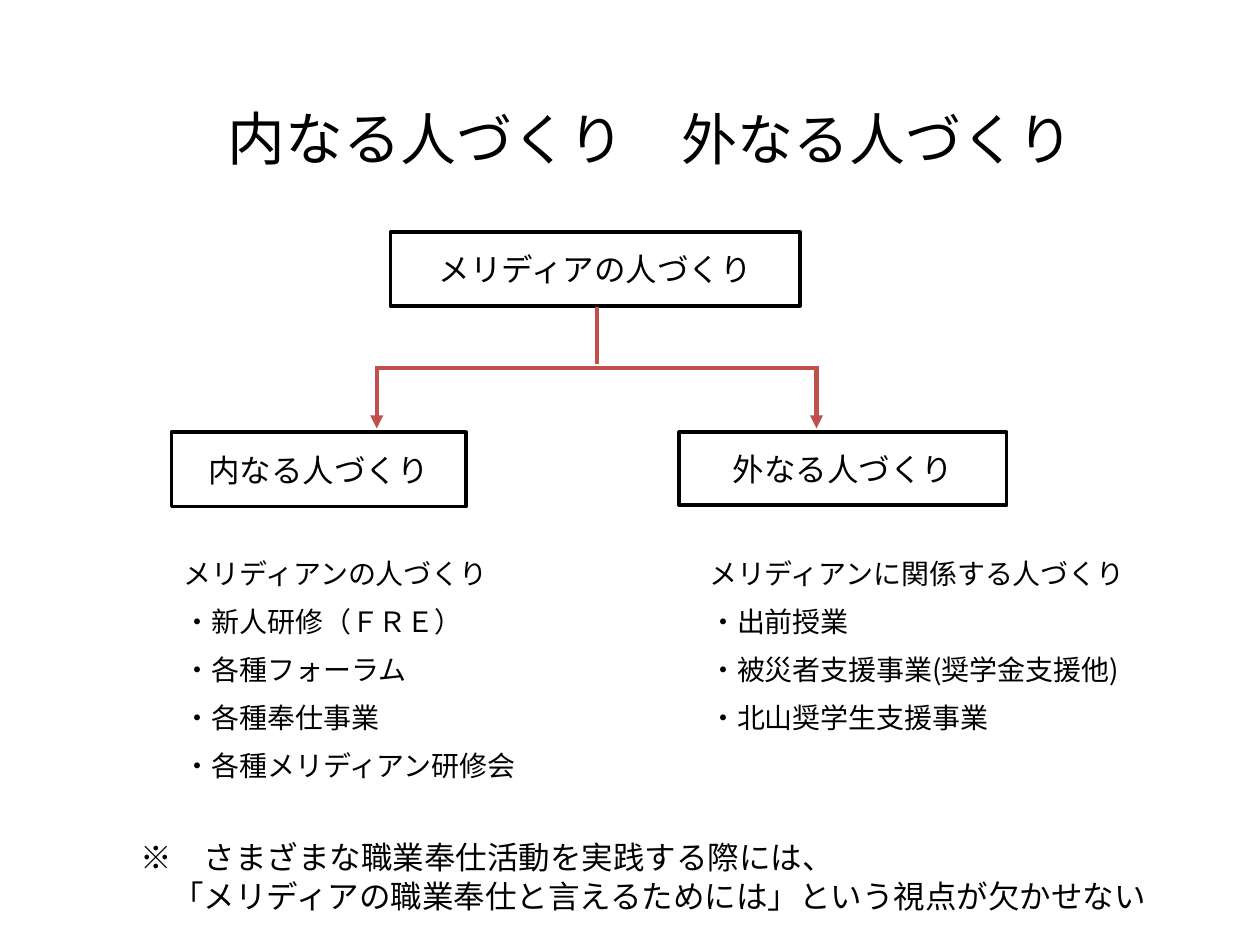
"""Build a one-slide chart of inner and outer people development."""
from dataclasses import dataclass

from lxml import etree
from pptx import Presentation
from pptx import util as u
from pptx.dml.color import RGBColor
from pptx.enum import shapes, text
from pptx.oxml.ns import qn

COLORS = {"ink": "000000", "arrow": "C0504D"}
FONT = "Noto Sans CJK JP"
COLS, ROWS = 100, 75
LINE_RATIO = 1.22
ARROW_WIDTH = 2.5


@dataclass(frozen=True)
class Area:
    """Place and size in grid columns and rows."""
    col: float
    row: float
    cols: float
    rows: float


@dataclass(frozen=True)
class Run:
    """A piece of text with its size in points."""
    words: str
    size: float


@dataclass(frozen=True)
class Block:
    """Paragraphs of runs in one area of the slide."""
    area: Area
    paragraphs: list[list[Run]]
    gap: float = 0
    align: text.PP_ALIGN = text.PP_ALIGN.LEFT


def lines(size: float, *words: str) -> list[list[Run]]:
    """Make one single-run paragraph of each string."""
    return [[Run(w, size)] for w in words]


BOXES = [
    Area(31, 18.4, 32.5, 5.9),
    Area(13.6, 34.3, 23.4, 5.9),
    Area(53.9, 34.3, 26, 5.8),
]
BOX_LABELS = lines(18, "メリディアの人づくり", "内なる人づくり", "外なる人づくり")
TITLE = Block(
    Area(8.5, 7.6, 86.3, 9),
    [[Run("内なる", 33), Run("人づくり　外なる人づくり", 32)]],
    align=text.PP_ALIGN.CENTER,
)
INNER = Block(
    Area(13.6, 43.6, 32.6, 19.9),
    lines(16, "メリディアンの人づくり", "・新人研修（ＦＲＥ）", "・各種フォーラム",
          "・各種奉仕事業", "・各種メリディアン研修会"),
    gap=8,
)
OUTER = Block(
    Area(55.3, 43.6, 38.6, 19.9),
    lines(16, "メリディアンに関係する人づくり", "・出前授業",
          "・被災者支援事業(奨学金支援他)", "・北山奨学生支援事業"),
    gap=8,
)
NOTE = Block(
    Area(10.2, 66, 82.8, 7.1),
    lines(18, "※　さまざまな職業奉仕活動を実践する際には、",
          "　「メリディアの職業奉仕と言えるためには」という視点が欠かせない"),
)
STEM = ((47.4, 24.4), (47.4, 28.9))
BRANCH = [(29.9, 34), (29.9, 29.2), (64.8, 29.2), (64.8, 34)]


def rgb(name: str) -> RGBColor:
    """Look up a colour of the slide."""
    return RGBColor.from_string(COLORS[name])


def place(prs, col: float, row: float) -> tuple[int, int]:
    """Turn grid columns and rows into slide lengths."""
    return round(prs.slide_width * col / COLS), round(prs.slide_height * row / ROWS)


def bounds(prs, area: Area) -> tuple[int, ...]:
    """Give left, top, width and height of an area."""
    return place(prs, area.col, area.row) + place(prs, area.cols, area.rows)


def write(tf, block: Block) -> None:
    """Fill a text frame run by run."""
    tf.word_wrap = True
    for i, runs in enumerate(block.paragraphs):
        p = tf.add_paragraph() if i else tf.paragraphs[0]
        p.alignment = block.align
        p.line_spacing = u.Pt(max(r.size for r in runs) * LINE_RATIO)
        p.space_before = u.Pt(block.gap if i else 0)
        for part in runs:
            r = p.add_run()
            r.text = part.words
            r.font.size = u.Pt(part.size)
            r.font.name = FONT
            r.font.color.rgb = rgb("ink")
            ea = etree.SubElement(r.font._element, qn("a:ea"))
            ea.set("typeface", FONT)


def add_text(prs, s, block: Block) -> None:
    """Add a plain text block."""
    write(s.shapes.add_textbox(*bounds(prs, block.area)).text_frame, block)


def add_box(prs, s, block: Block) -> None:
    """Add an outlined box with a centred label."""
    sp = s.shapes.add_shape(shapes.MSO_SHAPE.RECTANGLE, *bounds(prs, block.area))
    sp.shadow.inherit = False
    sp.fill.background()
    sp.line.color.rgb = rgb("ink")
    sp.line.width = u.Pt(2)
    sp.text_frame.vertical_anchor = text.MSO_ANCHOR.MIDDLE
    write(sp.text_frame, block)


def style_line(line) -> None:
    """Give a line the arrow colour and width."""
    line.color.rgb = rgb("arrow")
    line.width = u.Pt(ARROW_WIDTH)


def add_stem(prs, s) -> None:
    """Draw the line down from the top box."""
    (x1, y1), (x2, y2) = STEM
    sp = s.shapes.add_connector(
        shapes.MSO_CONNECTOR.STRAIGHT, *place(prs, x1, y1), *place(prs, x2, y2))
    style_line(sp.line)
    etree.SubElement(sp._element.spPr, qn("a:effectLst"))


def add_branch(prs, s) -> None:
    """Draw the forked line with an arrowhead at each end."""
    start, *rest = [place(prs, *point) for point in BRANCH]
    builder = s.shapes.build_freeform(*start)
    builder.add_line_segments(rest, close=False)
    sp = builder.convert_to_shape()
    sp.shadow.inherit = False
    sp.fill.background()
    style_line(sp.line)
    ln = sp.line._get_or_add_ln()
    etree.SubElement(ln, qn("a:miter")).set("lim", "800000")
    for end in ("a:headEnd", "a:tailEnd"):
        etree.SubElement(ln, qn(end)).set("type", "triangle")


def main() -> None:
    """Build and save the slide."""
    prs = Presentation()
    prs.slide_width, prs.slide_height = u.Inches(10), u.Inches(7.5)
    s = prs.slides.add_slide(prs.slide_layouts[6])
    add_text(prs, s, TITLE)
    for area, label in zip(BOXES, BOX_LABELS):
        add_box(prs, s, Block(area, [label], align=text.PP_ALIGN.CENTER))
    add_stem(prs, s)
    add_branch(prs, s)
    for block in (INNER, OUTER, NOTE):
        add_text(prs, s, block)
    prs.save("out.pptx")


if __name__ == "__main__":
    main()
